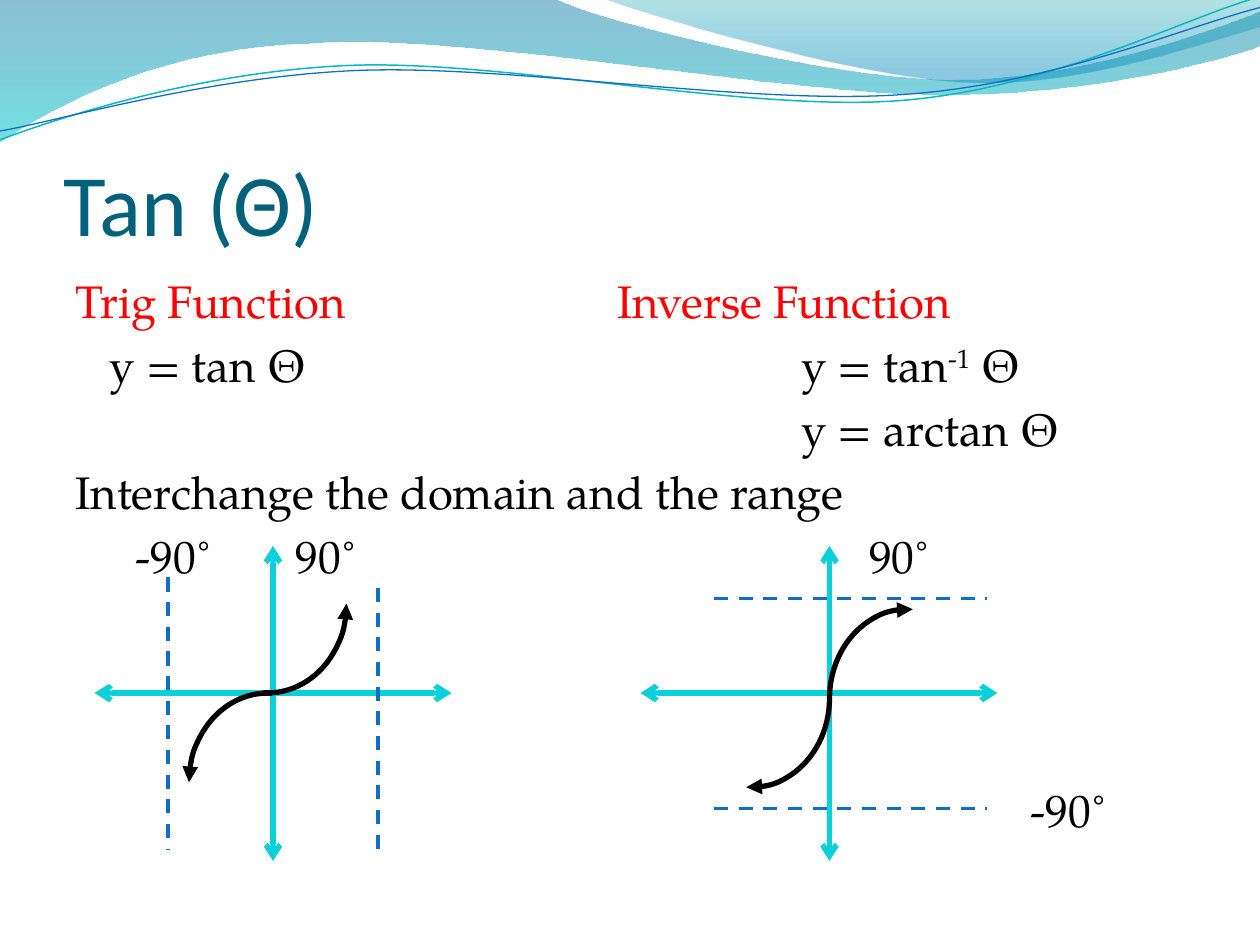
from dataclasses import dataclass

from lxml.etree import SubElement
from pptx import Presentation
from pptx.dml.color import RGBColor as Color
from pptx.enum.dml import MSO_LINE_DASH_STYLE as Dash
from pptx.enum.shapes import MSO_CONNECTOR_TYPE as Connector, MSO_SHAPE as Preset
from pptx.enum.text import MSO_ANCHOR as Anchor
from pptx.oxml.ns import qn
from pptx.util import Inches, Pt


@dataclass(frozen=True)
class Theme:
    title_font: str = "Calibri"
    body_font: str = "TeX Gyre Pagella"
    title_size: float = 50
    body_size: float = 26
    row_gap: float = 5.2
    graph_gap: float = 114.3
    title: str = "04617B"
    heading: str = "FF0000"
    text: str = "000000"
    axis: str = "0BD0D9"
    asymptote: str = "0F6FC6"
    wave_teal: str = "0AB8BF"
    wide_wave: tuple = ((0, "0074A1", 45), (1, "00C6CF", 55))
    right_wave: tuple = ((0, "00A1A9", 30), (0.8, "008BBF", 45))


THEME = Theme()
CELLS_PER_INCH = 12


@dataclass(frozen=True)
class Box:
    column: float
    row: float
    columns: float
    rows: float

    def inside(self, column, row, columns=0, rows=0):
        return Box(self.column + column, self.row + row, columns, rows)

    def frame(self):
        cells = (self.column, self.row, self.columns, self.rows)
        return [Inches(cell / CELLS_PER_INCH) for cell in cells]


def apply(target, values):
    for name, value in values.items():
        setattr(target, name, value)


def style_line(shape, color, width, dash=None, ends=()):
    shape.line.color.rgb = Color.from_string(color)
    apply(shape.line, {"width": Pt(width), "dash_style": dash})
    outline = shape.line._get_or_add_ln()
    for end, kind in ends:
        SubElement(outline, qn(f"a:{end}"), type=kind)


def add_line(slide, box, color, width, **style):
    left, top, width_span, height_span = box.frame()
    line = slide.shapes.add_connector(
        Connector.STRAIGHT, left, top, left + width_span, top + height_span)
    style_line(line, color, width, **style)
    SubElement(line._element.spPr, qn("a:effectLst"))


def add_text_box(slide, box, anchor, insets):
    frame = slide.shapes.add_textbox(*box.frame()).text_frame
    names = ("margin_left", "margin_top", "margin_right", "margin_bottom")
    apply(frame, {"word_wrap": True, "vertical_anchor": anchor,
                  **dict(zip(names, map(Inches, insets)))})
    return frame


def add_run(paragraph, text, font, size, color, baseline=0):
    run = paragraph.add_run()
    run.text = text
    apply(run.font, {"name": font, "size": Pt(size)})
    run.font.color.rgb = Color.from_string(color)
    if baseline:
        run._r.get_or_add_rPr().set("baseline", str(baseline * 1000))


def curves(*points):
    return [points[index:index + 3] for index in range(0, len(points), 3)]


def add_outline(slide, box, start, strokes, close):
    left, top = box.frame()[:2]
    vertices = [(left + Inches(x), top + Inches(y))
                for x, y in [start] + [point for stroke in strokes for point in stroke]]
    builder = slide.shapes.build_freeform(*vertices[0])
    builder.add_line_segments(vertices[1:], close=close)
    shape = builder.convert_to_shape()
    shape.shadow.inherit = False
    segments = iter(list(shape._element.iter(qn("a:lnTo"))))
    for stroke in strokes:
        first, *others = [next(segments) for _ in stroke]
        if others:
            first.tag = qn("a:cubicBezTo")
            for other in others:
                first.append(other[0])
                other.getparent().remove(other)
    return shape


def fill_gradient(shape, stops):
    shape.fill.gradient()
    shape.fill.gradient_angle = 270
    for stop, (position, color, opacity) in zip(shape.fill.gradient_stops, stops):
        stop.position = position
        stop.color.rgb = Color.from_string(color)
        tint = stop._gs.find(qn("a:srgbClr"))
        SubElement(tint, qn("a:alpha"), val=str(opacity * 1000))
    shape.line.fill.background()


def add_waves(slide, box):
    upper = curves((4.76, 0.17), (6.64, 0.63), (7.58, 0.63),
                   (8.53, 0.63), (9.58, 0.26), (10, 0.09))
    lower = curves((9.83, 0.44), (8.7, 0.76), (7.46, 0.75),
                   (6.22, 0.75), (3.82, 0.28), (2.57, 0.34),
                   (1.29, 0.36), (0.46, 0.83), (-0.01, 1.13))
    right = curves((5.09, 0.11), (6.82, 0.62), (7.69, 0.65),
                   (8.56, 0.69), (9.61, 0.32), (10, 0.21))
    bands = (
        ((0, 0), [[(4.4, -0.01)], *upper, [(10.01, 0.36)], *lower], THEME.wide_wave),
        ((4.79, -0.01), [*right, [(10, 0)]], THEME.right_wave),
    )
    for start, strokes, stops in bands:
        fill_gradient(add_outline(slide, box, start, strokes, True), stops)

    strands = (
        ((0, 1.11),
         curves((0.48, 0.93), (1.58, 0.57), (2.77, 0.52), (3.95, 0.47), (5.93, 0.89),
                (7.13, 0.8), (8.33, 0.71), (9.38, 0.15), (9.98, -0.02)),
         THEME.wave_teal, 0.85),
        ((0, 1.04),
         curves((0.47, 0.96), (1.64, 0.61), (2.83, 0.56), (4.03, 0.51), (5.97, 0.84),
                (7.17, 0.75), (8.36, 0.67), (9.41, 0.21), (10, 0.06)),
         THEME.asymptote, 0.75),
    )
    for start, strokes, color, width in strands:
        strand = add_outline(slide, box, start, strokes, False)
        strand.fill.background()
        style_line(strand, color, width)


def add_title(slide, box, text):
    frame = add_text_box(slide, box, Anchor.BOTTOM, (0, 0.05, 0, 0))
    add_run(frame.paragraphs[0], text, THEME.title_font, THEME.title_size, THEME.title)


def add_body(slide, box, rows):
    frame = add_text_box(slide, box, Anchor.TOP, (0.1, 0.05, 0.1, 0.05))
    for index, (color, gap, stops, pieces) in enumerate(rows):
        paragraph = frame.add_paragraph() if index else frame.paragraphs[0]
        paragraph.space_before = Pt(gap)
        tabs = SubElement(paragraph._p.get_or_add_pPr(), qn("a:tabLst"))
        for stop in stops:
            SubElement(tabs, qn("a:tab"), pos=str(Inches(stop)), algn="l")
        for text, baseline in pieces:
            add_run(paragraph, text, THEME.body_font, THEME.body_size, color, baseline)


def add_graph(slide, box, center, arcs, arrow_end, asymptotes):
    column, row = center
    arrows = [("headEnd", "arrow"), ("tailEnd", "arrow")]
    for axis in (box.inside(0, row, box.columns, 0), box.inside(column, 0, 0, box.rows)):
        add_line(slide, axis, THEME.axis, 3, ends=arrows)
    for rotation, position in zip((270, 90), arcs):
        arc = slide.shapes.add_shape(Preset.ARC, *box.inside(*position, 17, 15).frame())
        arc.adjustments[0], arc.adjustments[1] = 162, 1.74
        arc.rotation = rotation
        arc.shadow.inherit = False
        arc.fill.background()
        style_line(arc, THEME.text, 3, ends=[(arrow_end, "triangle")])
    for asymptote in asymptotes:
        add_line(slide, box.inside(*asymptote), THEME.asymptote, 2, dash=Dash.DASH)


def main():
    presentation = Presentation()
    apply(presentation, {"slide_width": Inches(10), "slide_height": Inches(7.5)})
    slide = presentation.slides.add_slide(presentation.slide_layouts[6])

    add_waves(slide, Box(0, 0, 120, 14))
    add_title(slide, Box(6.06, 9.2, 108, 15), "Tan (Θ)")
    add_body(slide, Box(6, 25.44, 108, 57.6), [
        (THEME.heading, THEME.row_gap, [4.3], [("Trig Function\tInverse Function", 0)]),
        (THEME.text, THEME.row_gap, [0.27, 5.76],
         [("\ty = tan Θ\ty = tan", 0), ("-1", 30), (" Θ", 0)]),
        (THEME.text, THEME.row_gap, [5.76], [("\ty = arctan Θ", 0)]),
        (THEME.text, THEME.row_gap, [], [("Interchange the domain and the range", 0)]),
        (THEME.text, THEME.row_gap, [0.48, 1.75, 6.3], [("\t-90˚\t90˚\t90˚", 0)]),
        (THEME.text, THEME.graph_gap, [7.58], [("\t-90˚", 0)]),
    ])
    add_graph(slide, Box(9, 52, 34, 30), (17, 14), [(8, 15), (8, -2)], "headEnd",
              [(7, 3, 0, 26), (27, 4, 0, 25)])
    add_graph(slide, Box(61, 52, 34, 30), (18, 14), [(17, 7), (2, 7)], "tailEnd",
              [(7, 5, 26, 0), (7, 25, 26, 0)])
    presentation.save("out.pptx")


if __name__ == "__main__":
    main()
